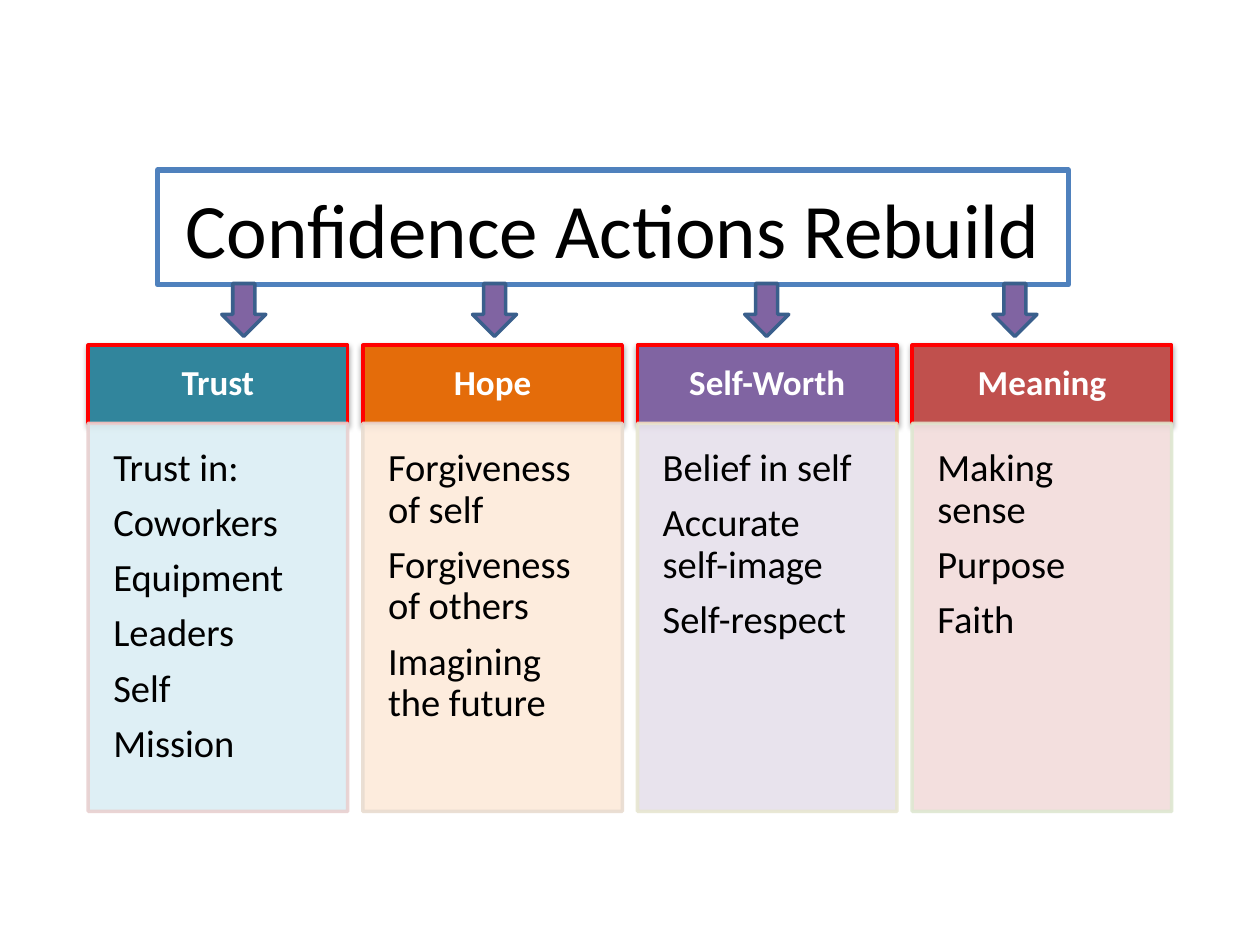
from lxml.etree import SubElement
from pptx import Presentation
from pptx.dml.color import RGBColor
from pptx.enum.shapes import MSO_SHAPE as SHAPE
from pptx.enum.text import MSO_ANCHOR as ANCHOR, PP_ALIGN as ALIGN
from pptx.oxml.ns import qn
from pptx.util import Inches, Pt

FONT = "Calibri"
BLACK = RGBColor(0x00, 0x00, 0x00)
WHITE = RGBColor(0xFF, 0xFF, 0xFF)
RED = RGBColor(0xFF, 0x00, 0x00)
BLUE = RGBColor(0x4F, 0x81, 0xBD)
DARK_BLUE = RGBColor(0x3A, 0x5F, 0x8C)
PURPLE = RGBColor(0x80, 0x64, 0xA2)

# heading, heading fill, body fill, body line, items
COLUMNS = [
    ("Trust", RGBColor(0x31, 0x85, 0x9C), RGBColor(0xDB, 0xEE, 0xF4), RGBColor(0xE8, 0xD0, 0xD0),
     ["Trust in:", "Coworkers", "Equipment", "Leaders", "Self", "Mission"]),
    ("Hope", RGBColor(0xE4, 0x6C, 0x0A), RGBColor(0xFD, 0xEA, 0xDA), RGBColor(0xE8, 0xDC, 0xD0),
     ["Forgiveness of self", "Forgiveness of others", "Imagining the future"]),
    ("Self-Worth", PURPLE, RGBColor(0xE6, 0xE0, 0xEC), RGBColor(0xE7, 0xE6, 0xD1),
     ["Belief in self", "Accurate self-image", "Self-respect"]),
    ("Meaning", RGBColor(0xC0, 0x50, 0x4D), RGBColor(0xF2, 0xDC, 0xDB), RGBColor(0xDE, 0xE7, 0xD1),
     ["Making sense", "Purpose", "Faith"]),
]
COLUMN_LEFT, COLUMN_PITCH, COLUMN_WIDTH = 0.7, 2.18, 2.06
ARROW_LEFTS = [1.76, 3.75, 5.91, 7.88]


def add_box(slide, kind, left, top, width, height, fill, line, weight=2):
    sp = slide.shapes.add_shape(kind, Inches(left), Inches(top), Inches(width), Inches(height))
    sp.shadow.inherit = False
    if fill is None:
        sp.fill.background()
    else:
        sp.fill.solid()
        sp.fill.fore_color.rgb = fill
    sp.line.color.rgb = line
    sp.line.width = Pt(weight)
    return sp


def write(sp, lines, size, color, inset, anchor=ANCHOR.MIDDLE, align=ALIGN.CENTER,
          bold=False, spacing=1.0, after=0):
    tf = sp.text_frame
    tf.word_wrap = True
    tf.vertical_anchor = anchor
    tf.margin_left = tf.margin_right = tf.margin_top = tf.margin_bottom = Inches(inset)
    for i, line in enumerate(lines):
        p = tf.add_paragraph() if i else tf.paragraphs[0]
        p.text = line
        p.alignment = align
        p.line_spacing = spacing
        p.space_after = Pt(after)
        p.font.name = FONT
        p.font.size = Pt(size)
        p.font.bold = bold
        p.font.color.rgb = color


def add_shadow(sp):
    effects = sp.element.spPr.find(qn("a:effectLst"))
    shadow = SubElement(effects, qn("a:outerShdw"), blurRad=str(Pt(3.1)), dist=str(Pt(1.6)),
                        dir="5400000", rotWithShape="0")
    color = SubElement(shadow, qn("a:srgbClr"), val="000000")
    SubElement(color, qn("a:alpha"), val="38000")


def set_opacity(sp, percent):
    """Apply the opacity to both the fill and the line."""
    for color in sp.element.spPr.iter(qn("a:srgbClr")):
        SubElement(color, qn("a:alpha"), val=str(percent * 1000))


def add_title(slide, left, top, width, height):
    sp = add_box(slide, SHAPE.RECTANGLE, left, top, width, height, None, BLUE, 3)
    write(sp, ["Confidence Actions Rebuild"], 44, BLACK, 0.05)


def add_column(slide, left, top, width, height, column, head_height=0.62):
    heading, head_fill, body_fill, body_line, items = column
    head = add_box(slide, SHAPE.RECTANGLE, left, top, width, head_height, head_fill, RED)
    add_shadow(head)
    write(head, [heading], 20, WHITE, 0.16, bold=True, spacing=0.9)
    body = add_box(slide, SHAPE.RECTANGLE, left, top + head_height, width,
                   height - head_height, body_fill, body_line)
    set_opacity(body, 90)
    write(body, items, 22, BLACK, 0.2, ANCHOR.TOP, ALIGN.LEFT, spacing=0.9, after=7.7)


def main():
    prs = Presentation()
    prs.slide_width, prs.slide_height = Inches(10), Inches(7.5)
    s = prs.slides.add_slide(prs.slide_layouts[6])
    add_title(s, 1.25, 1.35, 7.23, 0.91)
    for i, column in enumerate(COLUMNS):
        add_column(s, COLUMN_LEFT + i * COLUMN_PITCH, 2.74, COLUMN_WIDTH, 3.7, column)
    for left in ARROW_LEFTS:
        add_box(s, SHAPE.DOWN_ARROW, left, 2.25, 0.35, 0.42, PURPLE, DARK_BLUE)
    prs.save("out.pptx")


if __name__ == "__main__":
    main()
